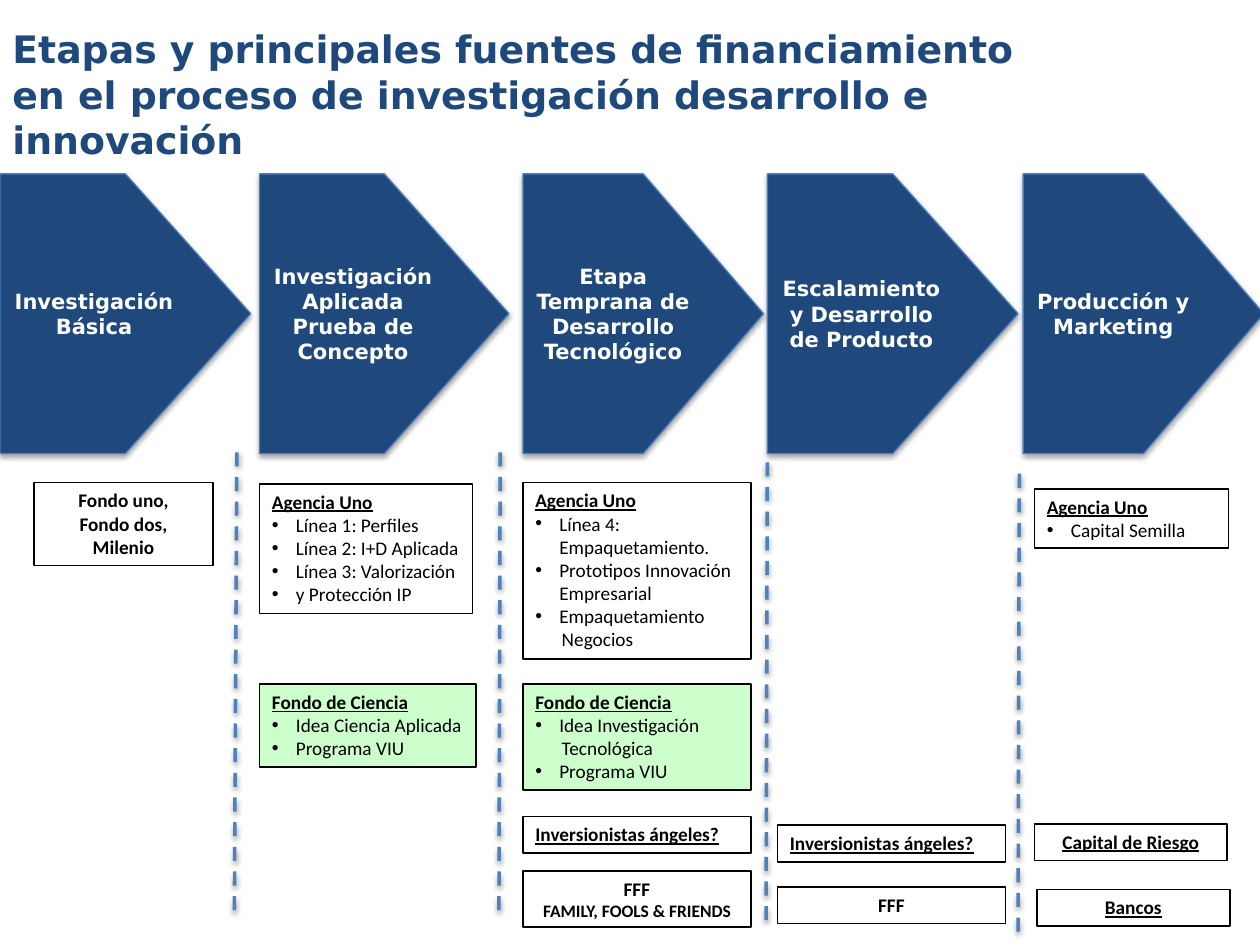
import pptx
import pptx.util
import pptx.dml.color
import pptx.enum.dml
import pptx.enum.shapes
import pptx.enum.text
import pptx.oxml
import pptx.oxml.ns

Inches = pptx.util.Inches
Pt = pptx.util.Pt
ALIGN = pptx.enum.text.PP_ALIGN
SHAPE = pptx.enum.shapes.MSO_SHAPE
COLOURS = {
    "navy": "1F497D",
    "edge": "4B7EBC",
    "divider": "4F81BD",
    "green": "CCFFCC",
    "black": "000000",
    "white": "FFFFFF",
}
HEADING_FONT = "DejaVu Sans"
BODY_FONT = "Calibri"


def colour(name):
    return pptx.dml.color.RGBColor.from_string(COLOURS[name])


def add_element(parent, xml):
    parent.append(pptx.oxml.parse_xml(xml))


def write_text(para, text, size=11, font=BODY_FONT, ink="black", bold=False,
               underline=False, align=ALIGN.LEFT, indent=0, bullet=False):
    properties = para._p.get_or_add_pPr()
    if indent:
        properties.set("marL", str(Inches(indent)))
        properties.set("indent", str(-Inches(indent) if bullet else 0))
    if bullet:
        namespace = pptx.oxml.ns.nsdecls("a")
        add_element(properties, f'<a:buFont {namespace} typeface="Arial"/>')
        add_element(properties, f'<a:buChar {namespace} char="•"/>')
    para.alignment = align
    span = para.add_run()
    span.text = text
    span.font.size = Pt(size)
    span.font.name = font
    span.font.bold = bold
    span.font.underline = underline
    span.font.color.rgb = colour(ink)


def plain(text, **style):
    return text, style


def heading(text, **style):
    return text, {"bold": True, "underline": True, **style}


def centred(text, **style):
    return text, {"bold": True, "align": ALIGN.CENTER, **style}


def bullet(text):
    return text, {"bullet": True, "indent": 0.19}


def continuation(text):
    return text, {"indent": 0.21}


class StageSlide:
    """Holds the style and the current slide."""

    arrow_top, arrow_height = 1.38, 2.22

    def __init__(self, slide):
        self.slide = slide

    def fill_frame(self, shape, paragraphs, anchor, wrap=True):
        frame = shape.text_frame
        frame.word_wrap = wrap
        frame.vertical_anchor = anchor
        for index, (text, style) in enumerate(paragraphs):
            para = frame.add_paragraph() if index else frame.paragraphs[0]
            write_text(para, text, **style)
        return frame

    def cast_shadow(self, shape, distance, opacity):
        add_element(shape._element.spPr, (
            f'<a:effectLst {pptx.oxml.ns.nsdecls("a")}>'
            f'<a:outerShdw blurRad="{Pt(3.1)}" dist="{Pt(distance)}" '
            'dir="5400000" rotWithShape="0">'
            f'<a:srgbClr val="{COLOURS["black"]}">'
            f'<a:alpha val="{opacity * 1000}"/></a:srgbClr>'
            '</a:outerShdw></a:effectLst>'))

    def outlined(self, kind, left, top, width, height, line, weight, fill=None):
        shape = self.slide.shapes.add_shape(
            kind, Inches(left), Inches(top), Inches(width), Inches(height))
        if fill:
            shape.fill.solid()
            shape.fill.fore_color.rgb = colour(fill)
        else:
            shape.fill.background()
        shape.line.color.rgb = colour(line)
        shape.line.width = Pt(weight)
        return shape

    def title(self, text):
        box = self.slide.shapes.add_textbox(
            Inches(0), Inches(0.12), Inches(8.31), Inches(1.25))
        line = plain(text, size=21.6, font=HEADING_FONT, ink="navy", bold=True)
        self.fill_frame(box, [line], pptx.enum.text.MSO_ANCHOR.MIDDLE)

    def stage(self, left, width, *lines):
        arrow = self.outlined(SHAPE.PENTAGON, left, self.arrow_top, width,
                              self.arrow_height, "edge", 0.75, "navy")
        self.cast_shadow(arrow, 1.8, 35)
        paragraphs = [centred(line, size=12, font=HEADING_FONT, ink="white")
                      for line in lines]
        self.fill_frame(arrow, paragraphs, pptx.enum.text.MSO_ANCHOR.MIDDLE)

    def source(self, left, top, width, height, *paragraphs, fill=None, wrap=True):
        """Draw a box that names a source of funding."""
        box = self.outlined(SHAPE.RECTANGLE, left, top, width, height,
                            "black", 1, fill)
        box.shadow.inherit = False
        frame = self.fill_frame(box, paragraphs,
                                pptx.enum.text.MSO_ANCHOR.TOP, wrap)
        frame.auto_size = pptx.enum.text.MSO_AUTO_SIZE.SHAPE_TO_FIT_TEXT

    def divider(self, start_x, start_y, end_x, end_y):
        line = self.slide.shapes.add_connector(
            pptx.enum.shapes.MSO_CONNECTOR.STRAIGHT,
            Inches(start_x), Inches(start_y), Inches(end_x), Inches(end_y))
        line.line.color.rgb = colour("divider")
        line.line.width = Pt(2)
        line.line.dash_style = pptx.enum.dml.MSO_LINE.DASH
        self.cast_shadow(line, 1.6, 38)


def main():
    deck = pptx.Presentation()
    deck.slide_width, deck.slide_height = Inches(10), Inches(7.5)
    page = StageSlide(deck.slides.add_slide(deck.slide_layouts[6]))

    for left, width, *lines in (
        (0, 1.99, "Investigación Básica"),
        (2.06, 1.98, "Investigación Aplicada", "Prueba de Concepto"),
        (4.15, 1.91, "Etapa Temprana de Desarrollo Tecnológico"),
        (6.09, 1.99, "Escalamiento y Desarrollo de Producto"),
        (8.12, 1.91, "Producción y Marketing"),
    ):
        page.stage(left, width, *lines)

    page.title("Etapas y principales fuentes de financiamiento en el proceso "
               "de investigación desarrollo e innovación")

    page.source(0.27, 3.83, 1.42, 0.66, centred("Fondo uno,"),
                centred("Fondo dos,"), centred("Milenio"))

    page.source(2.06, 3.84, 1.69, 1.03, heading("Agencia Uno"),
                bullet("Línea 1: Perfiles"), bullet("Línea 2: I+D Aplicada"),
                bullet("Línea 3: Valorización"), bullet("y Protección IP"),
                wrap=False)
    page.source(2.06, 5.43, 1.72, 0.66, heading("Fondo de Ciencia"),
                bullet("Idea Ciencia Aplicada"), bullet("Programa VIU"),
                fill="green", wrap=False)

    page.source(4.15, 3.83, 1.81, 1.4, heading("Agencia Uno"),
                bullet("Línea 4: Empaquetamiento."),
                bullet("Prototipos Innovación Empresarial"),
                bullet("Empaquetamiento"), continuation("Negocios"))
    page.source(4.15, 5.43, 1.81, 0.84, heading("Fondo de Ciencia"),
                bullet("Idea Investigación"), continuation("Tecnológica"),
                bullet("Programa VIU"), fill="green")
    page.source(4.15, 6.91, 1.81, 0.45, centred("FFF"),
                centred("FAMILY, FOOLS & FRIENDS", size=10))
    for left, top in ((4.15, 6.48), (6.17, 6.55)):
        page.source(left, top, 1.81, 0.29, heading("Inversionistas ángeles?"))

    page.source(6.17, 7.04, 1.81, 0.29, centred("FFF"))

    page.source(8.21, 3.88, 1.54, 0.47, heading("Agencia Uno"),
                bullet("Capital Semilla"))
    for left, top, name in ((8.21, 6.54, "Capital de Riesgo"),
                            (8.23, 7.06, "Bancos")):
        page.source(left, top, 1.53, 0.29, centred(name, underline=True))

    for ends in ((1.88, 3.59, 1.86, 7.24), (3.97, 3.59, 3.96, 7.24),
                 (6.09, 3.67, 6.08, 7.33), (8.09, 3.76, 8.08, 7.41)):
        page.divider(*ends)

    deck.save("out.pptx")


if __name__ == "__main__":
    main()
